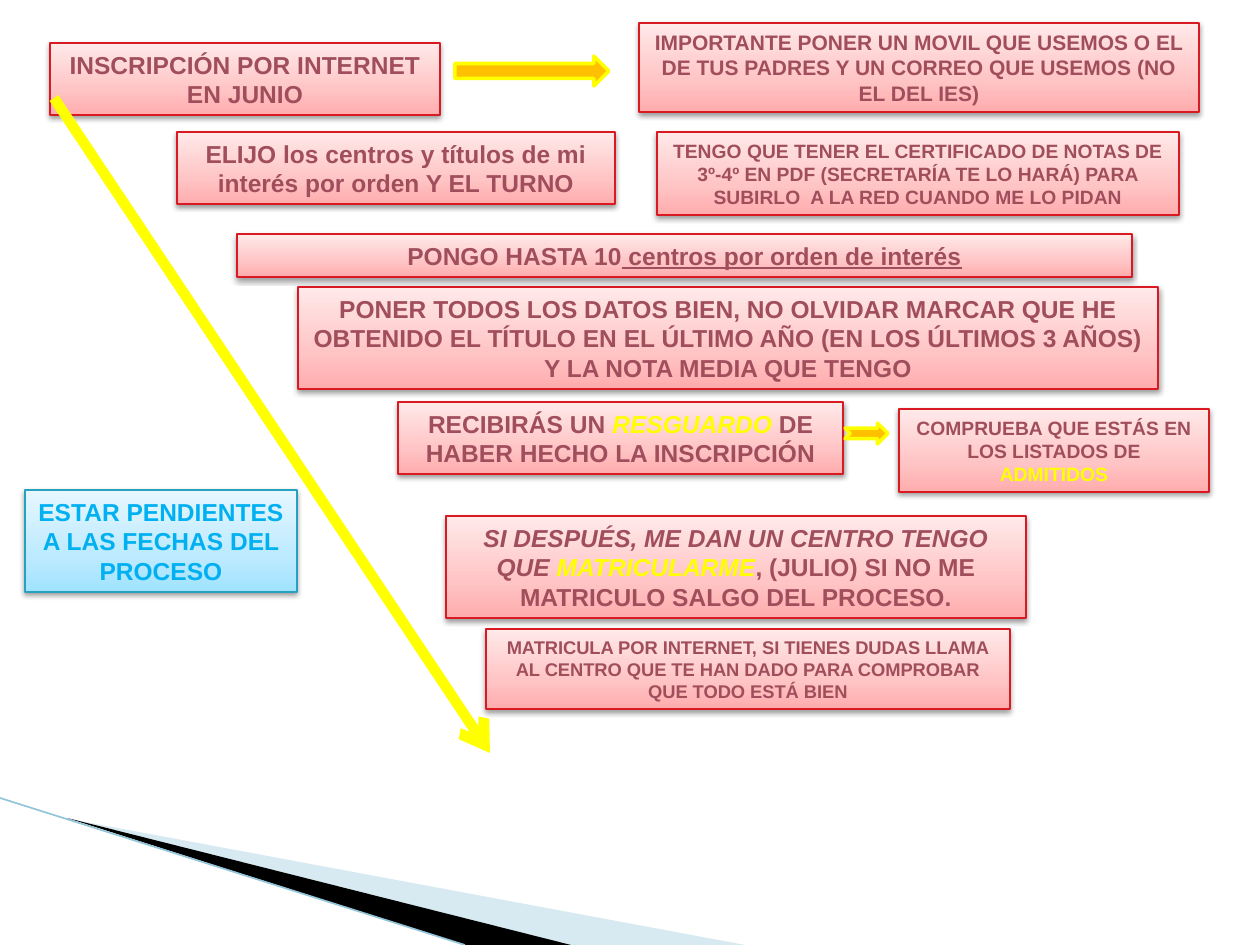
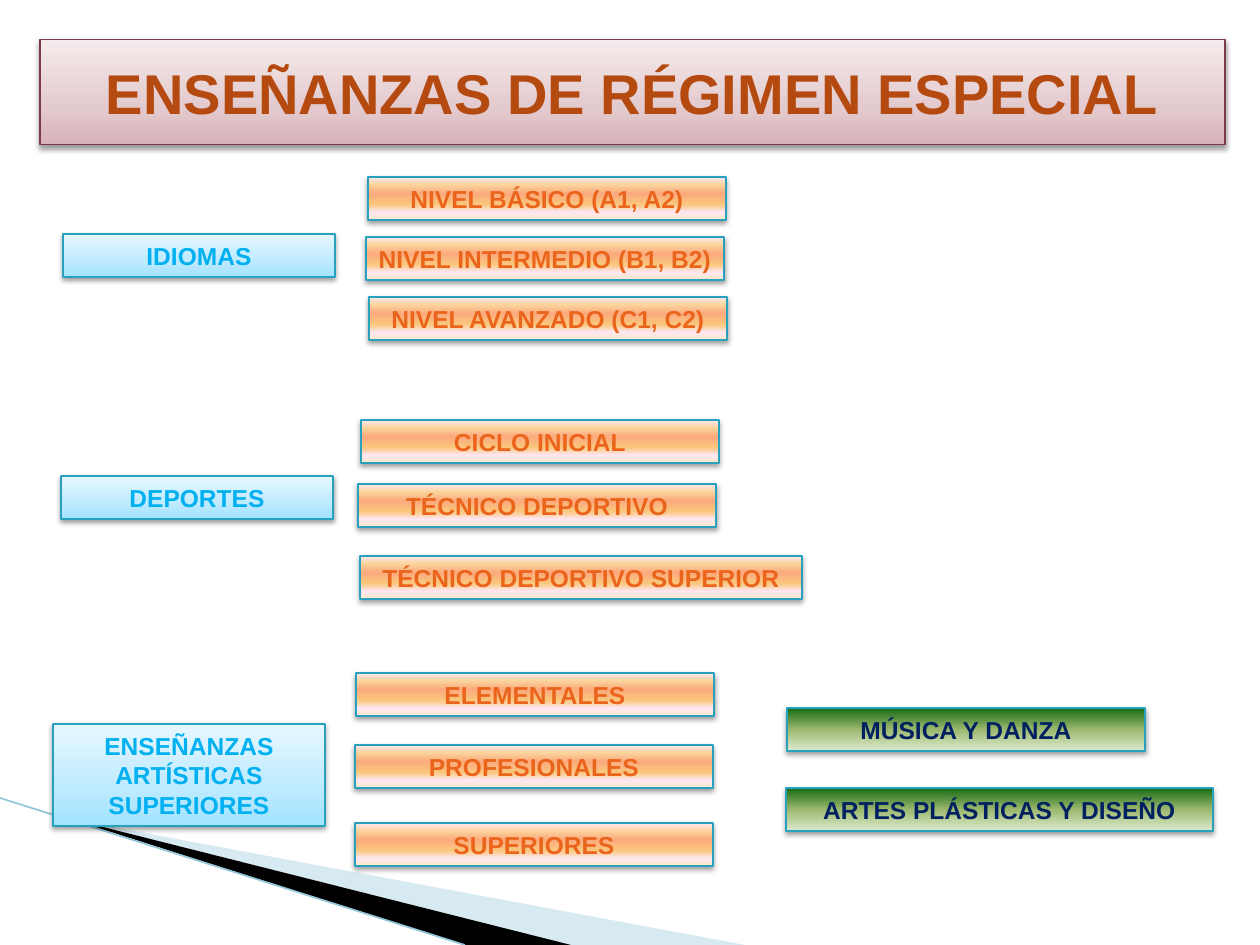
from lxml import etree
from pptx import Presentation
from pptx.dml.color import RGBColor
from pptx.enum.shapes import MSO_CONNECTOR, MSO_SHAPE
from pptx.enum.text import MSO_ANCHOR, MSO_AUTO_SIZE, PP_ALIGN
from pptx.oxml.ns import qn
from pptx.util import Pt

RECT = MSO_SHAPE.RECTANGLE
RIGHT_ARROW = MSO_SHAPE.RIGHT_ARROW
NOTCHED_ARROW = MSO_SHAPE.NOTCHED_RIGHT_ARROW
STRAIGHT = MSO_CONNECTOR.STRAIGHT
CENTER = PP_ALIGN.CENTER
MIDDLE = MSO_ANCHOR.MIDDLE
GROW = MSO_AUTO_SIZE.SHAPE_TO_FIT_TEXT

PX = 914400 / 126
FONT = "Arial"
BLACK = RGBColor(0x00, 0x00, 0x00)
YELLOW = RGBColor(0xFF, 0xFF, 0x00)
AMBER = RGBColor(0xFF, 0xC0, 0x00)
RED = RGBColor(0xDA, 0x1A, 0x23)
WINE = RGBColor(0xA1, 0x4E, 0x5C)
PLUM = RGBColor(0x7C, 0x39, 0x47)
RUST = RGBColor(0xB5, 0x4A, 0x10)
ORANGE = RGBColor(0xEB, 0x64, 0x1B)
TEAL = RGBColor(0x28, 0xA1, 0xBE)
SKY = RGBColor(0x00, 0xB0, 0xF0)
NAVY = RGBColor(0x00, 0x20, 0x60)
PALE_BLUE = RGBColor(0x9C, 0xCA, 0xDC)
EDGE_BLUE = RGBColor(0x93, 0xC5, 0xD8)

STYLES = {
    "step": ([(0, "FFACAD"), (35, "FFC4C5"), (100, "FFE9E9")], RED, WINE),
    "family": ([(0, "A1E3FF"), (35, "BDEAFF"), (100, "E6F7FF")], TEAL, SKY),
    "title": ([(0, "D8B3B9"), (35, "E3CACE"), (100, "F5EBEC")], PLUM, RUST),
    "level": ([(0, "FBEAC7"), (18, "FEE7F2"), (36, "FAC77D"), (61, "FBA97D"),
               (82, "FBD49C"), (100, "FEE7F2")], TEAL, ORANGE),
    "branch": ([(0, "DDEBCF"), (50, "9CB86E"), (100, "156B13")], TEAL, NAVY),
}


def px(*values):
    return [round(value * PX) for value in values]


def format_card(shape, style, spans, size=14):
    stops, line_color, text_color = STYLES[style]
    shape.fill.gradient()
    shape.fill.gradient_angle = 90
    stop_list = shape._element.spPr.find(qn("a:gradFill")).find(qn("a:gsLst"))
    for stop in list(stop_list):
        stop_list.remove(stop)
    for position, color in stops:
        stop = etree.SubElement(stop_list, qn("a:gs"), pos=str(position * 1000))
        etree.SubElement(stop, qn("a:srgbClr"), val=color)
    shape.line.color.rgb = line_color
    shape.line.width = Pt(0.75)
    shape.shadow.inherit = False
    effects = shape._element.spPr.find(qn("a:effectLst"))
    shadow = etree.SubElement(effects, qn("a:outerShdw"), blurRad=str(Pt(3.1)),
                              dist=str(Pt(1.6)), dir="5400000", rotWithShape="0")
    shadow_color = etree.SubElement(shadow, qn("a:srgbClr"), val="000000")
    etree.SubElement(shadow_color, qn("a:alpha"), val="38000")
    frame = shape.text_frame
    for name, value in {"word_wrap": True, "auto_size": GROW,
                        "vertical_anchor": MIDDLE}.items():
        setattr(frame, name, value)
    para = frame.paragraphs[0]
    para.alignment = CENTER
    for text, changes in spans:
        span = para.add_run()
        span.text = text
        formats = {"name": FONT, "size": Pt(size), "bold": True, **changes}
        span.font.color.rgb = formats.pop("color", text_color)
        for name, value in formats.items():
            setattr(span.font, name, value)


deck = Presentation()
deck.slide_width, deck.slide_height = px(1260, 945)
steps_page = deck.slides.add_slide(deck.slide_layouts[6])
special_page = deck.slides.add_slide(deck.slide_layouts[5])

for page in (steps_page, special_page):
    for color, points in [
        (PALE_BLUE, [(69, 819), (745, 945), (570, 945)]),
        (BLACK, [(67, 818), (571, 945), (465, 945)]),
    ]:
        builder = page.shapes.build_freeform(*points[0], scale=PX)
        builder.add_line_segments(points[1:], close=True)
        wedge = builder.convert_to_shape()
        wedge.fill.solid()
        wedge.fill.fore_color.rgb = color
        wedge.line.fill.background()
        wedge.shadow.inherit = False
        if color == PALE_BLUE:
            tint = wedge._element.spPr.find(qn("a:solidFill"))[0]
            etree.SubElement(tint, qn("a:alpha"), val="40000")
    edge = page.shapes.add_connector(STRAIGHT, *px(0, 798, 465, 945))
    edge.line.color.rgb = EDGE_BLUE
    edge.line.width = Pt(0.95)
    etree.SubElement(edge._element.spPr, qn("a:effectLst"))

ACCENT = {"color": YELLOW}
ITALIC = {"italic": True}
ACCENT_ITALIC = {**ACCENT, **ITALIC}
steps = [
    ((50, 43, 390, 72), 14, [("INSCRIPCIÓN POR INTERNET EN JUNIO", {})]),
    ((177, 132, 438, 72), 14,
     [("ELIJO los centros y títulos de mi interés por orden Y EL TURNO", {})]),
    ((237, 234, 895, 43), 14,
     [("PONGO HASTA 10", {}), (" centros por orden de interés", {"underline": True})]),
    ((639, 23, 560, 89), 12,
     [("IMPORTANTE PONER UN MOVIL QUE USEMOS O EL DE TUS PADRES Y UN CORREO "
       "QUE USEMOS (NO EL DEL IES)", {})]),
    ((657, 132, 522, 83), 11,
     [("TENGO QUE TENER EL CERTIFICADO DE NOTAS DE 3º-4º EN PDF (SECRETARÍA TE LO "
       "HARÁ) PARA SUBIRLO  A LA RED CUANDO ME LO PIDAN", {})]),
    ((298, 287, 860, 102), 14,
     [("PONER TODOS LOS DATOS BIEN, NO OLVIDAR MARCAR QUE HE OBTENIDO EL TÍTULO EN "
       "EL ÚLTIMO AÑO (EN LOS ÚLTIMOS 3 AÑOS) Y LA NOTA MEDIA QUE TENGO", {})]),
    ((398, 402, 445, 72), 14,
     [("RECIBIRÁS UN ", {}), ("RESGUARDO", ACCENT_ITALIC),
      (" DE HABER HECHO LA INSCRIPCIÓN", {})]),
    ((446, 516, 580, 102), 14,
     [("SI DESPUÉS, ME DAN UN CENTRO TENGO QUE ", ITALIC),
      ("MATRICULARME", ACCENT_ITALIC),
      (", (JULIO) SI NO ME MATRICULO SALGO DEL PROCESO.", {})]),
    ((486, 629, 524, 80), 10.5,
     [("MATRICULA POR INTERNET, SI TIENES DUDAS LLAMA AL CENTRO QUE TE HAN DADO "
       "PARA COMPROBAR QUE TODO ESTÁ BIEN", {})]),
    ((899, 409, 310, 83), 11,
     [("COMPRUEBA QUE ESTÁS EN LOS LISTADOS DE ", {}), ("ADMITIDOS", ACCENT)]),
]
for box, size, spans in steps:
    format_card(steps_page.shapes.add_shape(RECT, *px(*box)), "step", spans, size)

for kind, box in [(RIGHT_ARROW, (455, 56, 154, 30)), (NOTCHED_ARROW, (845, 423, 43, 21))]:
    arrow = steps_page.shapes.add_shape(kind, *px(*box))
    arrow.fill.solid()
    arrow.fill.fore_color.rgb = AMBER
    arrow.line.color.rgb = YELLOW
    arrow.line.width = Pt(2)
    arrow.shadow.inherit = False

timeline = steps_page.shapes.add_connector(STRAIGHT, *px(54, 98, 490, 753))
timeline.line.color.rgb = YELLOW
timeline.line.width = Pt(6)
etree.SubElement(timeline.line._get_or_add_ln(), qn("a:tailEnd"), type="arrow")
etree.SubElement(timeline._element.spPr, qn("a:effectLst"))

reminder = steps_page.shapes.add_shape(RECT, *px(25, 490, 272, 102))
format_card(reminder, "family", [("ESTAR PENDIENTES A LAS FECHAS DEL PROCESO", {})])

title = special_page.shapes.title
title.left, title.top, title.width, title.height = px(40, 52, 1185, 80)
format_card(title, "title", [("ENSEÑANZAS DE RÉGIMEN ESPECIAL", {})], 32)

special_cards = [
    ("family", 63, 234, 272, 43, "IDIOMAS"),
    ("family", 61, 476, 272, 43, "DEPORTES"),
    ("family", 53, 724, 272, 102, "ENSEÑANZAS ARTÍSTICAS SUPERIORES"),
    ("level", 368, 177, 358, 43, "NIVEL BÁSICO (A1, A2)"),
    ("level", 366, 237, 358, 43, "NIVEL INTERMEDIO (B1, B2)"),
    ("level", 369, 297, 358, 43, "NIVEL AVANZADO (C1, C2)"),
    ("level", 361, 420, 358, 43, "CICLO INICIAL"),
    ("level", 358, 484, 358, 43, "TÉCNICO DEPORTIVO"),
    ("level", 360, 556, 442, 43, "TÉCNICO DEPORTIVO SUPERIOR"),
    ("level", 356, 673, 358, 43, "ELEMENTALES"),
    ("level", 355, 745, 358, 43, "PROFESIONALES"),
    ("level", 355, 823, 358, 43, "SUPERIORES"),
    ("branch", 787, 708, 358, 43, "MÚSICA Y DANZA"),
    ("branch", 786, 788, 427, 43, "ARTES PLÁSTICAS Y DISEÑO"),
]
for style, left, top, width, height, text in special_cards:
    card = special_page.shapes.add_shape(RECT, *px(left, top, width, height))
    format_card(card, style, [(text, {})])

deck.save("out.pptx")
